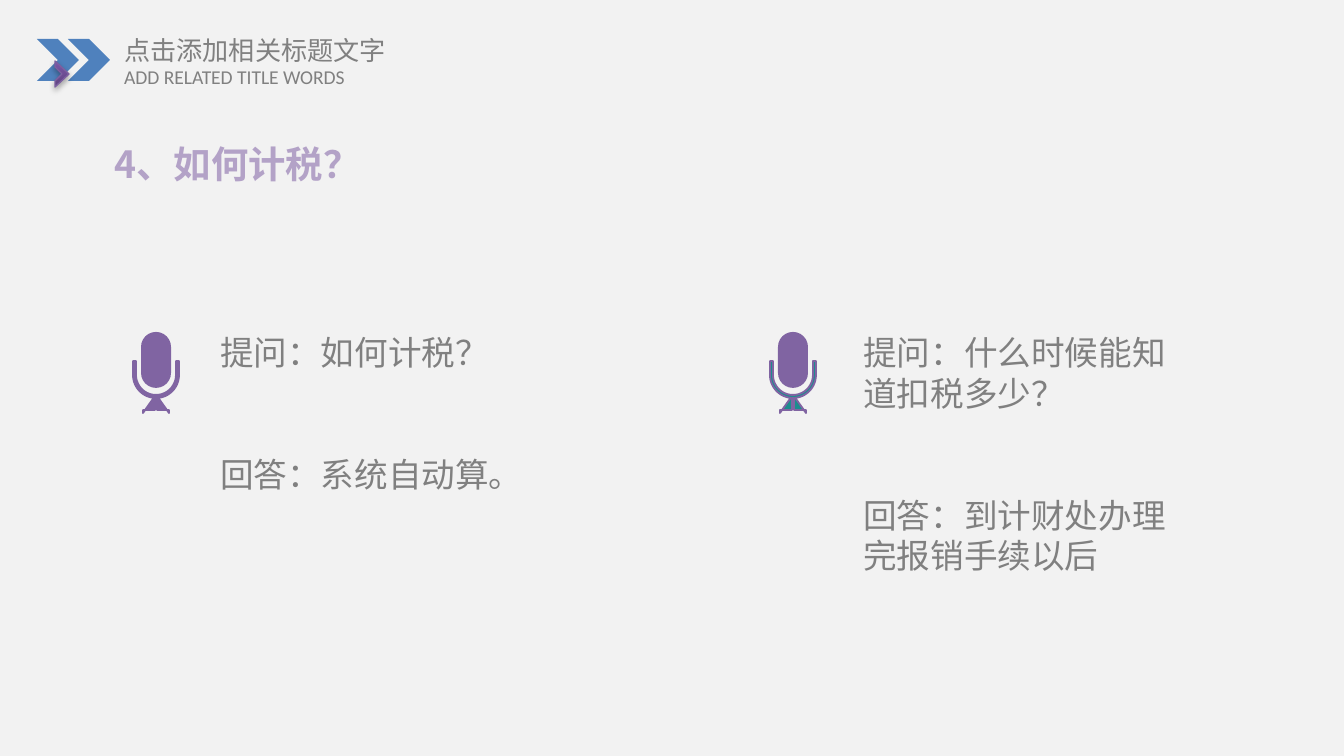
from math import cos, pi, sin

from lxml import etree
from pptx import Presentation
from pptx import util as u
from pptx.dml.color import RGBColor
from pptx.enum import shapes, text
from pptx.oxml.ns import qn

PX = 914400 / 134.4
PALE = RGBColor(0xF2, 0xF2, 0xF2)
GRAY = RGBColor(0x80, 0x80, 0x80)
BLUE = RGBColor(0x4F, 0x81, 0xBD)
LILAC = RGBColor(0xB3, 0xA2, 0xC7)
PURPLE = RGBColor(0x80, 0x64, 0xA2)
TEAL = RGBColor(0x1C, 0x8D, 0x8E)
EDGE = RGBColor(0x7D, 0x60, 0xA0)
DARK = RGBColor(0x5F, 0x44, 0x80)
LIGHT = RGBColor(0x7C, 0x57, 0xA8)
HAN = "Noto Sans CJK SC"
LEAD = 1.21


def emu(*vals):
    """Turn px lengths into EMU."""
    return [u.Emu(round(v * PX)) for v in vals]


def paint(shape, fill, line=None, width=1):
    """Give a shape a flat fill, an optional line and no shadow."""
    shape.shadow.inherit = False
    shape.fill.solid()
    shape.fill.fore_color.rgb = fill
    if line is None:
        shape.line.fill.background()
    else:
        shape.line.color.rgb = line
        shape.line.width = u.Pt(width)


def write(slide, box, lines, size, color=GRAY, face=HAN, bold=False,
          wrap=True, gap=0, anchor=text.MSO_ANCHOR.TOP):
    """Add a text box with one paragraph per line."""
    frame = slide.shapes.add_textbox(*emu(*box)).text_frame
    frame.word_wrap = wrap
    frame.vertical_anchor = anchor
    look = {"size": u.Pt(size), "name": face, "bold": bold}
    for i, line in enumerate(lines):
        para = frame.paragraphs[0] if i == 0 else frame.add_paragraph()
        para.line_spacing = u.Pt(size * LEAD)
        para.space_before = u.Pt(gap * size * LEAD if i else 0)
        run = para.add_run()
        run.text = line
        for key, val in look.items():
            setattr(run.font, key, val)
        run.font.color.rgb = color
        props = run._r.get_or_add_rPr()
        etree.SubElement(props, qn("a:ea"), typeface=face)


def trace(slide, points):
    """Add a closed outline through px points."""
    spots = [emu(*p) for p in points]
    pen = slide.shapes.build_freeform(*spots[0])
    pen.add_line_segments(spots[1:], close=True)
    return pen.convert_to_shape()


def bow(x, y, rad, steps=32):
    """List the points of a lower half circle from right to left."""
    turns = [pi * i / steps for i in range(steps + 1)]
    return [(x + rad * cos(t), y + rad * sin(t)) for t in turns]


def draw_mic(slide, x, fill):
    """Draw a microphone centred on x."""
    head = slide.shapes.add_shape(
        shapes.MSO_SHAPE.ROUNDED_RECTANGLE, *emu(x - 15, 332, 30, 56))
    head.adjustments[0] = 0.5
    paint(head, PURPLE)
    outer = bow(x, 375, 23)
    mid = len(outer) // 2
    foot = [(1, 398), (1, 410), (13, 410), (13, 413)]
    right = [(x + dx, y) for dx, y in foot]
    left = [(x - dx, y) for dx, y in reversed(foot)]
    points = [(x + 20, 361), *bow(x, 375, 20), (x - 20, 361), (x - 23, 361),
              *outer[:mid:-1], *left, *right, *outer[mid - 1::-1],
              (x + 23, 361)]
    paint(trace(slide, points), fill, PURPLE)


def draw_arrow(slide):
    """Draw the small shaded arrowhead over the chevrons."""
    arrow = trace(slide, [(62, 74), (55, 81), (55, 87),
                          (69, 74), (55, 61), (55, 67)])
    paint(arrow, DARK, EDGE, 0.75)
    arrow.fill.gradient()
    arrow.fill.gradient_angle = 90
    for stop, color in zip(arrow.fill.gradient_stops, (DARK, LIGHT)):
        stop.color.rgb = color
    glow = arrow._element.spPr.find(qn("a:effectLst"))
    shade = etree.SubElement(glow, qn("a:outerShdw"), blurRad="40000",
                             dist="23000", dir="5400000", rotWithShape="0")
    tone = etree.SubElement(shade, qn("a:srgbClr"), val="000000")
    etree.SubElement(tone, qn("a:alpha"), val="35000")


def draw_header(slide):
    """Draw the chevrons and the two title lines."""
    write(slide, (111, 28, 293, 46), ["点击添加相关标题文字"], 14, wrap=False)
    write(slide, (111, 58, 265, 39), ["ADD RELATED TITLE WORDS"], 10.5,
          face="Calibri", wrap=False)
    for x in (37, 68):
        paint(slide.shapes.add_shape(
            shapes.MSO_SHAPE.CHEVRON, *emu(x, 39, 42, 42)), BLUE)


def main():
    """Build and save the slide."""
    deck = Presentation()
    deck.slide_width, deck.slide_height = emu(1344, 756)
    slide = deck.slides.add_slide(deck.slide_layouts[6])
    slide.background.fill.solid()
    slide.background.fill.fore_color.rgb = PALE
    draw_header(slide)
    write(slide, (207, 325, 396, 176),
          ["提问：如何计税？", "回答：系统自动算。"], 18, gap=2)
    write(slide, (850, 325, 350, 258),
          ["提问：什么时候能知道扣税多少？", "回答：到计财处办理完报销手续以后"],
          18, gap=2)
    draw_arrow(slide)
    write(slide, (101, 44, 327, 149), ["4、如何计税？"], 20, LILAC,
          bold=True, anchor=text.MSO_ANCHOR.BOTTOM)
    for x, fill in ((156, PURPLE), (793, TEAL)):
        draw_mic(slide, x, fill)
    deck.save("out.pptx")


if __name__ == "__main__":
    main()
